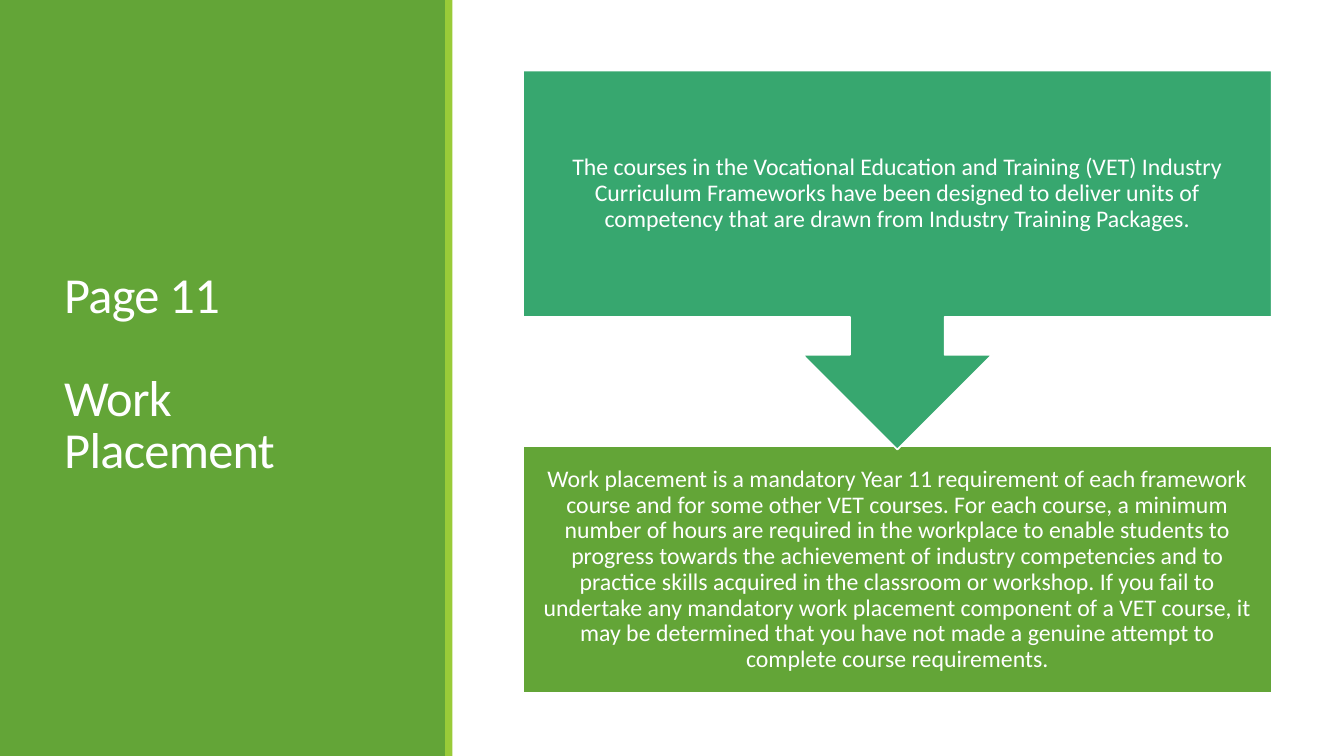
from pptx import Presentation
from pptx import util as u
from pptx.dml.color import RGBColor
from pptx.enum import shapes, text

SLIDE_W, SLIDE_H = 33.87, 19.05
GREEN, LIME, TEAL, WHITE = "63A537", "99CB38", "37A76F", "FFFFFF"
BOX_LEFT, BOX_W, BOX_H = 13.18, 18.87, 6.22
CALLOUT_TOP, CALLOUT_H = 1.78, 9.55

COURSES = (
    "The courses in the Vocational Education and Training (VET) Industry "
    "Curriculum Frameworks have been designed to deliver units of competency "
    "that are drawn from Industry Training Packages."
)
PLACEMENT = (
    "Work placement is a mandatory Year 11 requirement of each framework course "
    "and for some other VET courses. For each course, a minimum number of hours "
    "are required in the workplace to enable students to progress towards the "
    "achievement of industry competencies and to practice skills acquired in the "
    "classroom or workshop. If you fail to undertake any mandatory work placement "
    "component of a VET course, it may be determined that you have not made a "
    "genuine attempt to complete course requirements."
)


def color(hex_value):
    return RGBColor.from_string(hex_value)


def apply(target, values):
    for name, value in values.items():
        setattr(target, name, value)


class PlacementSlide:
    font = "Calibri"

    def __init__(self, presentation):
        self.slide = presentation.slides.add_slide(presentation.slide_layouts[6])

    def block(self, preset, left, top, width, height, fill, outline=None):
        block = self.slide.shapes.add_shape(
            preset, u.Cm(left), u.Cm(top), u.Cm(width), u.Cm(height))
        block.shadow.inherit = False
        block.fill.solid()
        block.fill.fore_color.rgb = color(fill)
        if outline:
            block.line.color.rgb = color(outline)
            block.line.width = u.Pt(1.25)
        else:
            block.line.fill.background()
        return block

    def fill_text(self, frame, lines, size, paragraph_format, inset=None, tracking=None):
        """Fill a text frame; tracking is in hundredths of a point."""
        apply(frame, {"word_wrap": True, "vertical_anchor": text.MSO_ANCHOR.MIDDLE})
        if inset is not None:
            sides = ("left", "top", "right", "bottom")
            apply(frame, {f"margin_{side}": u.Cm(inset) for side in sides})
        for index, line in enumerate(lines):
            paragraph = frame.add_paragraph() if index else frame.paragraphs[0]
            apply(paragraph, paragraph_format)
            run = paragraph.add_run()
            run.text = line
            apply(run.font, {"name": self.font, "size": u.Pt(size)})
            run.font.color.rgb = color(WHITE)
            if tracking is not None:
                run._r.get_or_add_rPr().set("spc", str(tracking))

    def title(self, lines, left, top, width, height):
        box = self.slide.shapes.add_textbox(
            u.Cm(left), u.Cm(top), u.Cm(width), u.Cm(height))
        self.fill_text(box.text_frame, lines, 36,
                       {"line_spacing": 0.85, "alignment": text.PP_ALIGN.LEFT},
                       tracking=-50)
        for later in box.text_frame.paragraphs[1:]:
            later.space_before = u.Pt(37)

    def step(self, preset, top, height, fill, statement):
        step = self.block(preset, BOX_LEFT, top, BOX_W, height, fill, WHITE)
        self.fill_text(step.text_frame, [statement], 17,
                       {"line_spacing": 0.9, "alignment": text.PP_ALIGN.CENTER},
                       inset=0.33)
        return step


def main():
    presentation = Presentation()
    apply(presentation, {"slide_width": u.Cm(SLIDE_W), "slide_height": u.Cm(SLIDE_H)})
    page = PlacementSlide(presentation)
    preset = shapes.MSO_SHAPE

    page.block(preset.RECTANGLE, 0, 0, 11.25, SLIDE_H, GREEN)
    page.title(["Page 11", "Work Placement"], 1.37, 1.45, 8.56, 16.03)
    page.block(preset.RECTANGLE, 11.22, 0, 0.18, SLIDE_H, LIME)

    page.step(preset.RECTANGLE, 11.25, BOX_H, GREEN, PLACEMENT)
    callout = page.step(preset.DOWN_ARROW_CALLOUT, CALLOUT_TOP, CALLOUT_H, TEAL, COURSES)
    callout.adjustments[3] = 0.65

    presentation.save("out.pptx")


if __name__ == "__main__":
    main()
